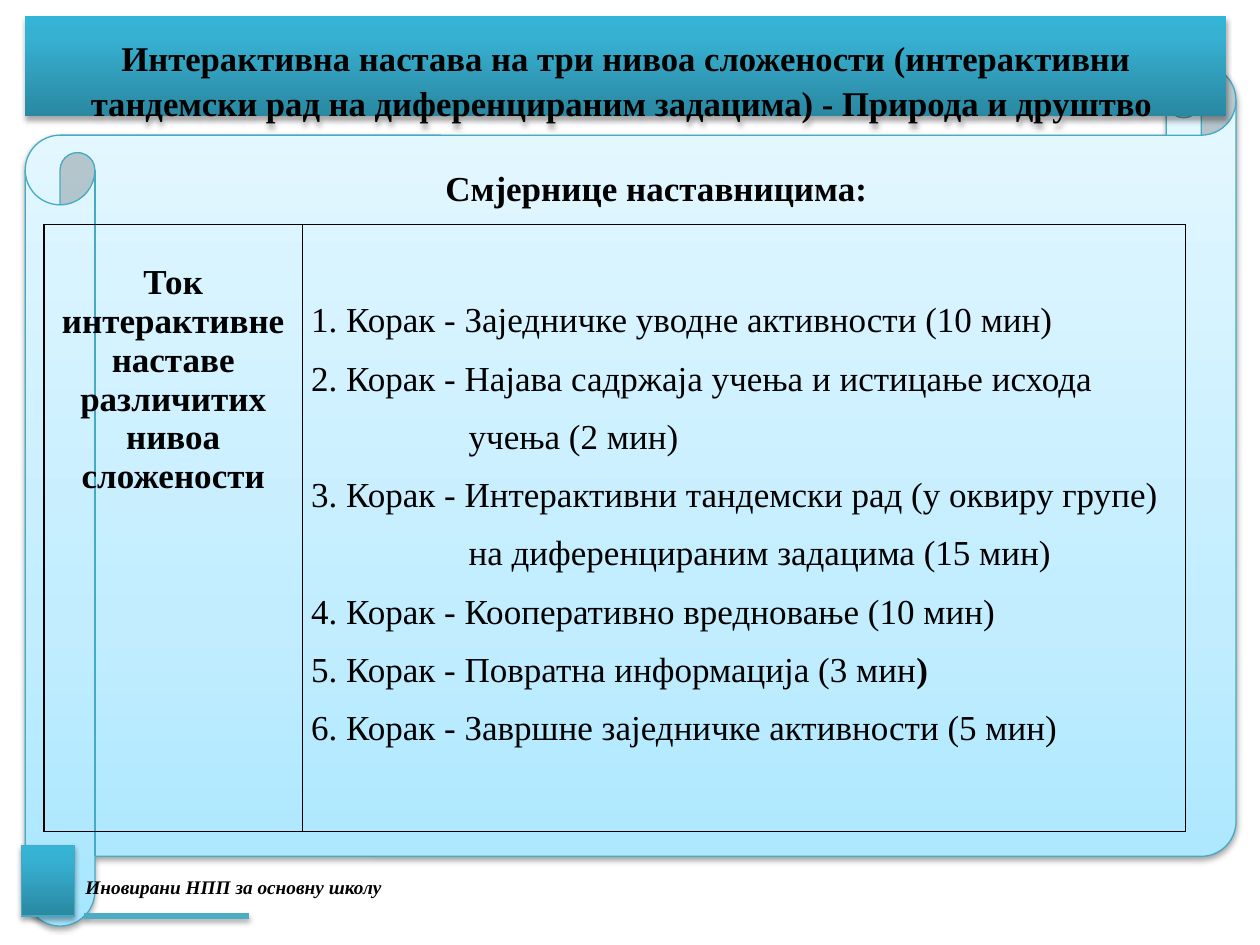
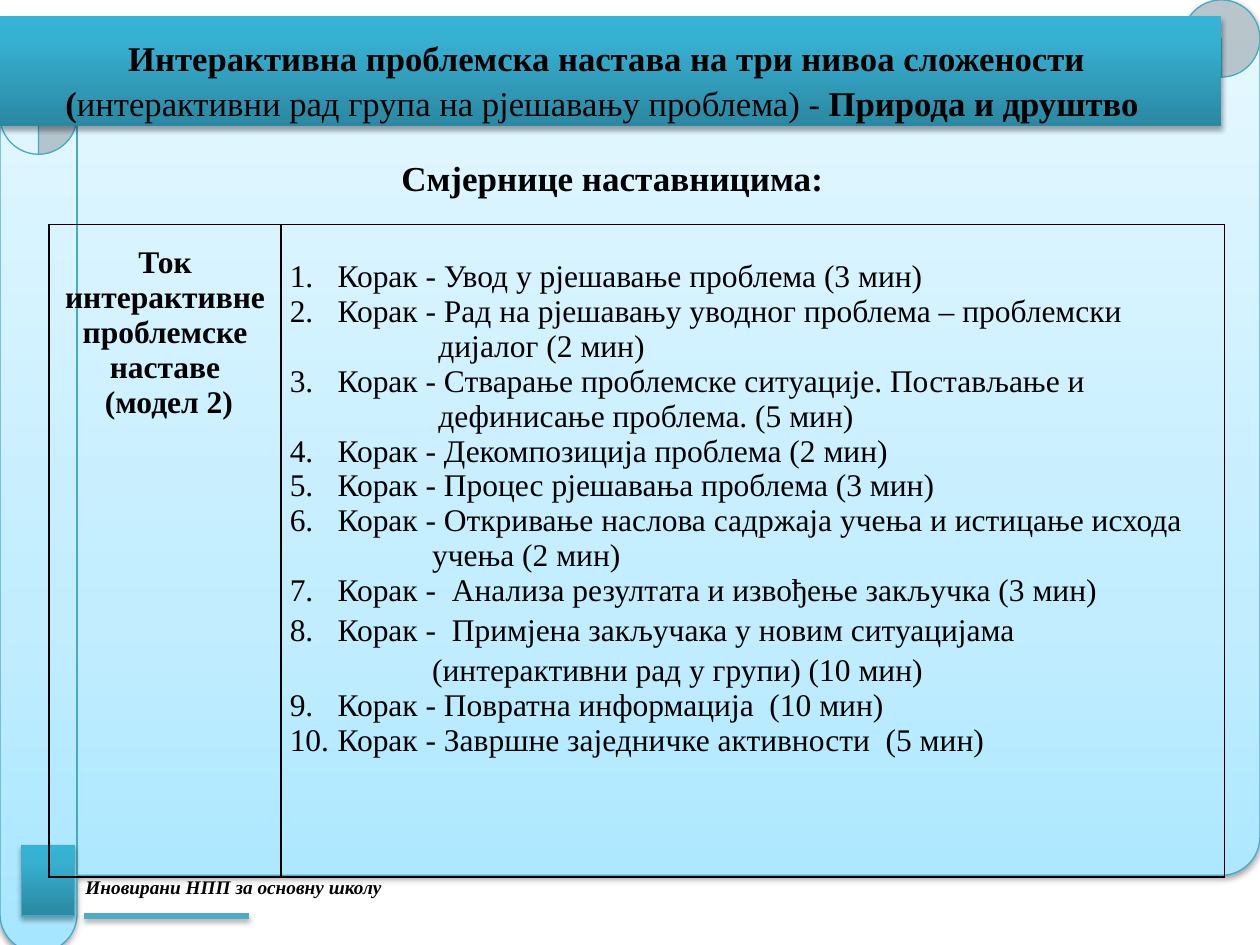
from typing import NamedTuple

from lxml import etree
from pptx import Presentation
from pptx.dml.color import RGBColor
from pptx.enum.shapes import MSO_CONNECTOR, MSO_SHAPE
from pptx.enum.text import MSO_ANCHOR, PP_ALIGN
from pptx.oxml.ns import qn
from pptx.util import Emu, Inches, Pt

SCROLL, RECTANGLE = MSO_SHAPE.HORIZONTAL_SCROLL, MSO_SHAPE.RECTANGLE
STRAIGHT = MSO_CONNECTOR.STRAIGHT
LEFT, CENTER = PP_ALIGN.LEFT, PP_ALIGN.CENTER
TOP, MIDDLE = MSO_ANCHOR.TOP, MSO_ANCHOR.MIDDLE

FONT = "Times New Roman"
BLACK = "000000"
EDGE = "46AAC5"
RULE = "4BACC6"
PALE = ((0, "A7E6FF"), (35, "C1EDFF"), (100, "E7F8FF"))
TEAL = ((0, "2A88A2"), (80, "37B1D2"), (100, "34B4D6"))
HEADING = "Смјернице наставницима:"
FOOTER = "Иновирани НПП за основну школу"


class Area(NamedTuple):
    left: float
    top: float
    width: float
    height: float


class Span(NamedTuple):
    text: str
    bold: bool = False


class Line(NamedTuple):
    spans: tuple[Span, ...]
    align: PP_ALIGN = LEFT
    spacing: float = 1.0
    margin: float = 0
    hang: float = 0


class Column(NamedTuple):
    width: float
    top_inset: float
    lines: list[Line]


class Lesson(NamedTuple):
    scroll: Area
    band: Area
    title: list[Line]
    heading: Area
    table: Area
    size: float
    columns: tuple[Column, Column]


def color(value: str) -> RGBColor:
    return RGBColor.from_string(value)


def centered(*spans: Span, spacing: float = 1.0) -> Line:
    return Line(spans, CENTER, spacing)


def bold_line(text: str, spacing: float = 1.0) -> Line:
    return centered(Span(text, True), spacing=spacing)


def step(text: str, spacing: float = 1.0, tail: str = "") -> Line:
    spans = (Span(text), Span(tail, True)) if tail else (Span(text),)
    return Line(spans, spacing=spacing, margin=0.38, hang=0.38)


def more(text: str, margin: float, spacing: float = 1.0) -> Line:
    """Second line of a step, set in under its wording."""
    return Line((Span(text),), spacing=spacing, margin=margin)


def write(frame, lines: list[Line], size: float, italic: bool = False) -> None:
    for number, line in enumerate(lines):
        para = frame.add_paragraph() if number else frame.paragraphs[0]
        para.alignment = line.align
        para.line_spacing = line.spacing
        para.font.name, para.font.size = FONT, Pt(size)
        para.font.italic = italic
        para.font.color.rgb = color(BLACK)
        if line.margin:
            properties = para._p.get_or_add_pPr()
            properties.set("marL", str(Inches(line.margin)))
            properties.set("indent", str(-Inches(line.hang)))
        for part in line.spans:
            span = para.add_run()
            span.text, span.font.bold = part.text, part.bold
            span.font.name, span.font.size = FONT, Pt(size)
            span.font.italic = italic
            span.font.color.rgb = color(BLACK)


def add_shadow(effects, opacity: int, distance: float) -> None:
    shadow = etree.SubElement(effects, qn("a:outerShdw"), blurRad=str(Pt(3.1)),
                              dist=str(Pt(distance)), dir="5400000", rotWithShape="0")
    tint = etree.SubElement(shadow, qn("a:srgbClr"), val=BLACK)
    etree.SubElement(tint, qn("a:alpha"), val=str(opacity * 1000))


def add_panel(page, kind, area: Area, stops, edge: str = "", opacity: int = 35,
              distance: float = 1.8):
    """Shape with an upward gradient and a soft shadow."""
    panel = page.shapes.add_shape(kind, *map(Inches, area))
    panel.fill.gradient()
    panel.fill.gradient_angle = 90
    stop_list = panel._element.spPr.find(qn("a:gradFill")).find(qn("a:gsLst"))
    for old in list(stop_list):
        stop_list.remove(old)
    for position, value in stops:
        stop = etree.SubElement(stop_list, qn("a:gs"), pos=str(position * 1000))
        etree.SubElement(stop, qn("a:srgbClr"), val=value)
    if edge:
        panel.line.color.rgb = color(edge)
        panel.line.width = Pt(0.75)
    else:
        panel.line.fill.background()
    panel.shadow.inherit = False
    add_shadow(panel._element.spPr.find(qn("a:effectLst")), opacity, distance)
    return panel


def add_text(page, area: Area, line: Line, size: float, anchor=TOP,
             italic: bool = False) -> None:
    box = page.shapes.add_textbox(*map(Inches, area))
    box.text_frame.word_wrap = True
    box.text_frame.vertical_anchor = anchor
    write(box.text_frame, [line], size, italic)


def add_footer(page) -> None:
    add_panel(page, RECTANGLE, Area(0.17, 6.71, 0.42, 0.56), TEAL, EDGE)
    add_text(page, Area(0.58, 6.9, 2.68, 0.29), Line((Span(FOOTER, True),)), 11, italic=True)
    rule = page.shapes.add_connector(STRAIGHT, Inches(0.67), Inches(7.27),
                                     Inches(1.98), Inches(7.27))
    rule.line.color.rgb = color(RULE)
    rule.line.width = Pt(3)
    effects = etree.SubElement(rule._element.spPr, qn("a:effectLst"))
    add_shadow(effects, 35, 1.8)


def outline_cell(cell) -> None:
    properties = cell._tc.get_or_add_tcPr()
    for index, side in enumerate(("a:lnL", "a:lnR", "a:lnT", "a:lnB")):
        border = etree.Element(qn(side), w=str(Pt(1)))
        fill = etree.SubElement(border, qn("a:solidFill"))
        etree.SubElement(fill, qn("a:srgbClr"), val=BLACK)
        properties.insert(index, border)


def add_steps_table(page, lesson: Lesson) -> None:
    table = page.shapes.add_table(1, len(lesson.columns), *map(Inches, lesson.table)).table
    table.first_row = table.horz_banding = False
    for index, column in enumerate(lesson.columns):
        table.columns[index].width = Inches(column.width)
        cell = table.cell(0, index)
        cell.fill.background()
        outline_cell(cell)
        cell.margin_left = cell.margin_right = Inches(0.07)
        cell.margin_top, cell.margin_bottom = Inches(column.top_inset), Emu(0)
        write(cell.text_frame, column.lines, lesson.size)


def add_lesson(deck, lesson: Lesson) -> None:
    page = deck.slides.add_slide(deck.slide_layouts[6])
    scroll = add_panel(page, SCROLL, lesson.scroll, PALE, EDGE, 38, 1.6)
    scroll.adjustments[0] = 0.081

    # Title band
    frame = add_panel(page, RECTANGLE, lesson.band, TEAL).text_frame
    frame.word_wrap = True
    frame.vertical_anchor = TOP
    frame.margin_top, frame.margin_bottom = Inches(0.14), Emu(0)
    write(frame, lesson.title, 19.8)

    add_footer(page)
    add_text(page, lesson.heading, bold_line(HEADING), 20, MIDDLE)
    add_steps_table(page, lesson)


TANDEM = Lesson(
    scroll=Area(0.2, 0.52, 9.61, 6.83),
    band=Area(0.2, 0.13, 9.53, 0.79),
    title=[
        bold_line("Интерактивна настава на три нивоа сложености (интерактивни", 1.07),
        bold_line("тандемски рад на диференцираним задацима) - Природа и друштво ", 1.07),
    ],
    heading=Area(2.71, 1.24, 5, 0.5),
    table=Area(0.35, 1.78, 9.06, 4.82),
    size=20,
    columns=(
        Column(2.05, 0.31, [bold_line("Ток интерактивне наставе различитих нивоа сложености")]),
        Column(7.01, 0.46, [
            step("1. Корак - Заједничке уводне активности (10 мин)", 1.5),
            step("2. Корак - Најава садржаја учења и истицање исхода", 1.5),
            more("учења (2 мин)", 1.25, 1.5),
            step("3. Корак - Интерактивни тандемски рад (у оквиру групе)", 1.5),
            more("на диференцираним задацима (15 мин)", 1.25, 1.5),
            step("4. Корак - Кооперативно вредновање (10 мин)", 1.5),
            step("5. Корак - Повратна информација (3 мин", 1.5, tail=")"),
            step("6. Корак - Завршне заједничке активности (5 мин)", 1.5),
        ]),
    ),
)

PROBLEM = Lesson(
    scroll=Area(0, 0, 10, 7.56),
    band=Area(0, 0.13, 9.69, 0.87),
    title=[
        bold_line("Интерактивна проблемска настава на три нивоа сложености ", 1.07),
        centered(Span("(", True),
                 Span("интерактивни рад група на рјешавању проблема) - "),
                 Span("Природа и друштво  ", True), spacing=1.07),
    ],
    heading=Area(2.36, 1.16, 5, 0.5),
    table=Area(0.39, 1.78, 9.33, 5.18),
    size=18,
    columns=(
        Column(1.84, 0.17, [bold_line("Ток интерактивне проблемске наставе"),
                            bold_line(" (модел 2)")]),
        Column(7.49, 0.28, [
            step("1.\tКорак - Увод у рјешавање проблема (3 мин)"),
            step("2.\tКорак - Рад на рјешавању уводног проблема – проблемски"),
            more("дијалог (2 мин)", 1.18),
            step("3.\tКорак - Стварање проблемске ситуације. Постављање и"),
            more("дефинисање проблема. (5 мин)", 1.18),
            step("4.\tКорак - Декомпозиција проблема (2 мин)"),
            step("5.\tКорак - Процес рјешавања проблема (3 мин)"),
            step("6.\tКорак - Откривање наслова садржаја учења и истицање исхода"),
            more("учења (2 мин)", 1.13),
            step("7.\tКорак -  Анализа резултата и извођење закључка (3 мин)"),
            step("8.\tКорак -  Примјена закључака у новим ситуацијама", 1.15),
            more("(интерактивни рад у групи) (10 мин)", 1.13, 1.15),
            step("9.\tКорак - Повратна информација  (10 мин)"),
            step("10.\tКорак - Завршне заједничке активности  (5 мин)"),
        ]),
    ),
)


def main() -> None:
    deck = Presentation()
    deck.slide_width, deck.slide_height = Inches(10), Inches(7.5)
    for lesson in (TANDEM, PROBLEM):
        add_lesson(deck, lesson)
    deck.save("out.pptx")


if __name__ == "__main__":
    main()
